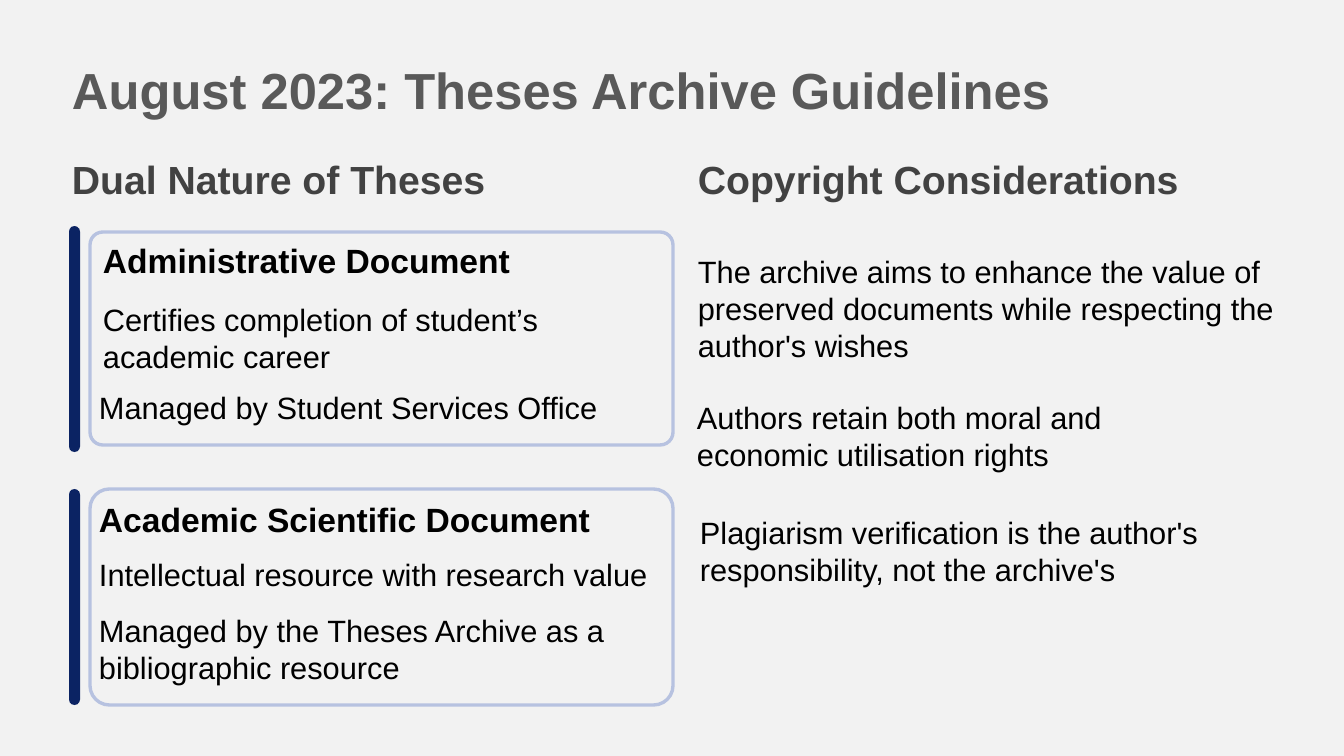
"""Build the slide on the August 2023 guidelines for the theses archive."""
from pptx import Presentation
from pptx import util as u
from pptx.dml.color import RGBColor
from pptx.enum import shapes, text

PAGE = RGBColor(0xF2, 0xF2, 0xF2)
TITLE_GREY = RGBColor(0x59, 0x59, 0x59)
HEADING_GREY = RGBColor(0x42, 0x42, 0x42)
BLACK = RGBColor(0, 0, 0)
NAVY = RGBColor(0x0B, 0x23, 0x63)
PALE_BLUE = RGBColor(0xB7, 0xC2, 0xE0)

PAGE_SIZE = (1344, 756)
TITLE = ("August 2023: Theses Archive Guidelines", (72, 56, 1145, 64))
HEADINGS = [
    ("Dual Nature of Theses", (72, 171)),
    ("Copyright Considerations", (698, 171)),
]
CARDS = [
    {
        "frame": (232, 213), "bar": (226, 226), "corner": 0.06,
        "name": ("Administrative Document", (103, 249)),
        "points": [
            ("Certifies completion of student’s\nacademic career", (103, 301), None),
            ("Managed by Student Services Office", (99, 393), 23.3),
        ],
    },
    {
        "frame": (489, 216), "bar": (489, 216), "corner": 0.09,
        "name": ("Academic Scientific Document", (99, 508)),
        "points": [
            ("Intellectual resource with research value", (99, 560), 23.3),
            ("Managed by the Theses Archive as a bibliographic resource", (99, 612), None),
        ],
    },
]
COPYRIGHT = [
    ("The archive aims to enhance the value of preserved documents "
     "while respecting the author's wishes", (698, 253)),
    ("Authors retain both moral and\neconomic utilisation rights", (697, 399)),
    ("Plagiarism verification is the author's responsibility, not the archive's",
     (700, 514)),
]
FRAME_X, FRAME_W = 90, 583
BAR_X, BAR_W = 69, 11
COLUMN_W, LINE_H = 576, 32


def px(*lengths):
    return [u.Emu(round(length * 914400 / 100.8)) for length in lengths]


def write(holder, wording, size, color, bold=False, leading=None):
    frame = holder.text_frame
    frame.word_wrap = True
    frame.auto_size = text.MSO_AUTO_SIZE.NONE
    frame.vertical_anchor = text.MSO_ANCHOR.TOP
    frame.margin_left = frame.margin_right = frame.margin_top = frame.margin_bottom = 0
    frame.text = wording
    for line in frame.paragraphs:
        line.alignment = text.PP_ALIGN.LEFT
        line.line_spacing = u.Pt(leading) if leading else 1.0
        line.font.name = "Arial"
        line.font.size = u.Pt(size)
        line.font.bold = bold
        line.font.color.rgb = color


def label(slide, wording, place, *style):
    write(slide.shapes.add_textbox(*px(*place, COLUMN_W, LINE_H)), wording, *style)


def rounded(slide, box, corner):
    shape = slide.shapes.add_shape(shapes.MSO_SHAPE.ROUNDED_RECTANGLE, *px(*box))
    shape.adjustments[0] = corner
    shape.shadow.inherit = False
    return shape


def add_card(slide, card):
    top, height = card["frame"]
    frame = rounded(slide, (FRAME_X, top, FRAME_W, height), card["corner"])
    frame.fill.background()
    frame.line.color.rgb = PALE_BLUE
    frame.line.width = u.Pt(2.4)

    top, height = card["bar"]
    bar = rounded(slide, (BAR_X, top, BAR_W, height), 0.5)
    bar.fill.solid()
    bar.fill.fore_color.rgb = NAVY
    bar.line.fill.background()

    label(slide, *card["name"], 24, BLACK, True, 22.5)
    for wording, place, leading in card["points"]:
        label(slide, wording, place, 22, BLACK, False, leading)


def main():
    deck = Presentation()
    deck.slide_width, deck.slide_height = px(*PAGE_SIZE)
    slide = deck.slides.add_slide(deck.slide_layouts[5])
    slide.background.fill.solid()
    slide.background.fill.fore_color.rgb = PAGE

    wording, box = TITLE
    title = slide.shapes.title
    title.left, title.top, title.width, title.height = px(*box)
    write(title, wording, 36.2, TITLE_GREY, True, 45.4)

    for wording, place in HEADINGS:
        label(slide, wording, place, 28, HEADING_GREY, True, 22.5)
    for card in CARDS:
        add_card(slide, card)
    for wording, place in COPYRIGHT:
        label(slide, wording, place, 22, BLACK)

    deck.save("out.pptx")


if __name__ == "__main__":
    main()
